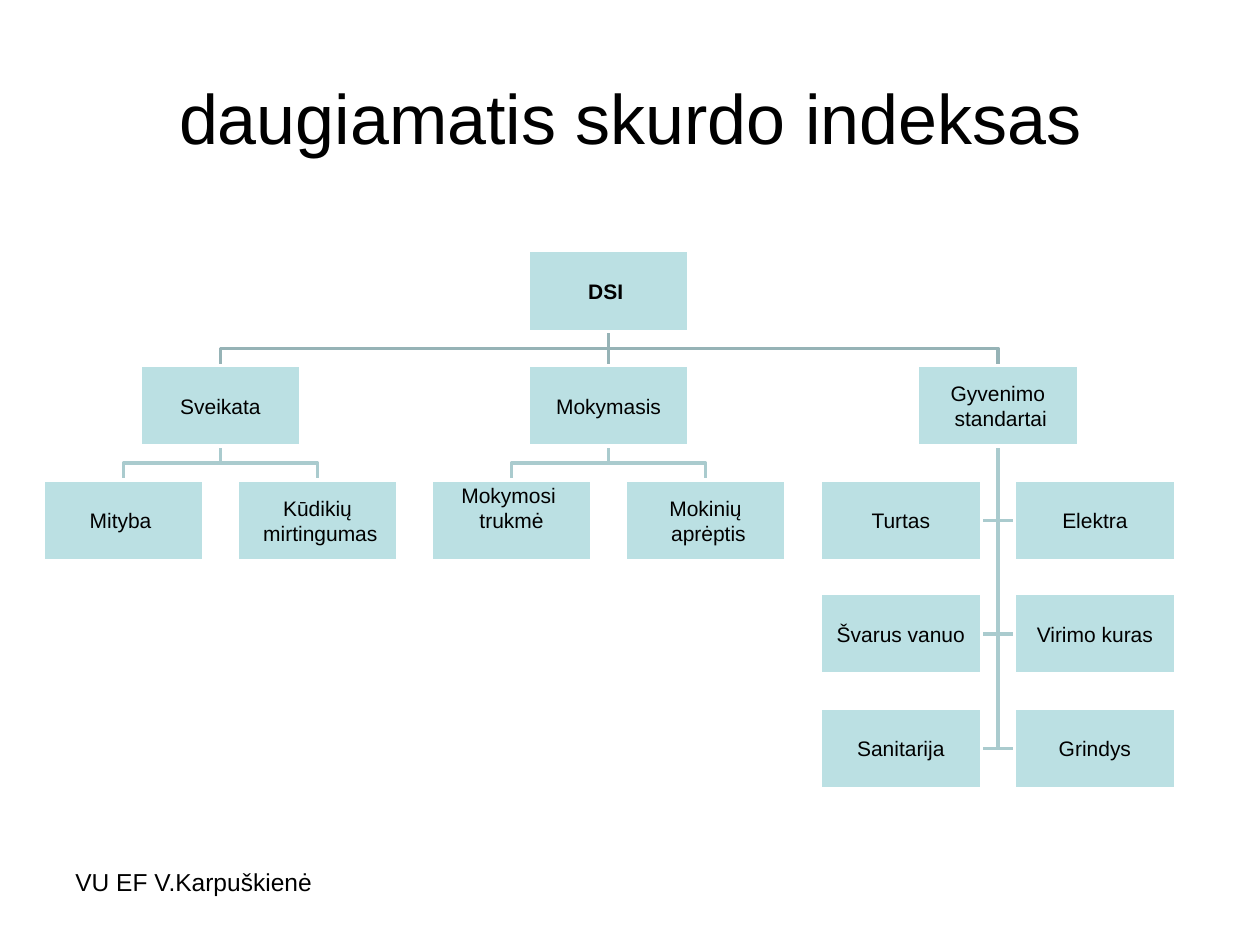
from lxml import etree
from pptx import Presentation
from pptx.dml.color import RGBColor
from pptx.enum.shapes import MSO_CONNECTOR, MSO_SHAPE
from pptx.enum.text import MSO_ANCHOR, PP_ALIGN
from pptx.oxml.ns import qn
from pptx.util import Inches, Pt

BOX_W, BOX_H = 1.28, 0.64
ROW_TOPS = [1.99, 2.9, 3.81, 4.71, 5.62]
ROOT_X = 4.83       # centre of the top box
LEAF_OFFSET = 0.77  # from a branch centre to its leaf centres
TRUNK, TWIG = "96B3B6", "AACBCE"

# Branch centre, branch lines, then rows of left and right leaves
BRANCHES = [
    (1.75, ["Sveikata"], [(["Mityba "], ["Kūdikių", " mirtingumas"])]),
    (ROOT_X, ["Mokymasis"], [(["Mokymosi ", "trukmė"], ["Mokinių", " aprėptis"])]),
    (7.92, ["Gyvenimo", " standartai"], [
        (["Turtas"], ["Elektra"]),
        (["Švarus vanuo"], ["Virimo kuras"]),
        (["Sanitarija"], ["Grindys"]),
    ]),
]


def rgb(hex_colour):
    return RGBColor.from_string(hex_colour)


def write(frame, lines, size, bold=False, align=PP_ALIGN.CENTER):
    frame.word_wrap = True
    for i, line in enumerate(lines):
        paragraph = frame.paragraphs[0] if i == 0 else frame.add_paragraph()
        paragraph.alignment = align
        run = paragraph.add_run()
        run.text = line
        run.font.name = "Arial"
        run.font.size = Pt(size)
        run.font.bold = bold
        run.font.color.rgb = rgb("000000")


prs = Presentation()
prs.slide_width, prs.slide_height = Inches(10), Inches(7.5)
slide = prs.slides.add_slide(prs.slide_layouts[5])
shapes = slide.shapes

# Title
title = shapes.title
title.left, title.top = Inches(0.5), Inches(0.3)
title.width, title.height = Inches(9), Inches(1.25)
title.text_frame.vertical_anchor = MSO_ANCHOR.MIDDLE
write(title.text_frame, ["daugiamatis skurdo indeksas"], 40)

# Author
author = shapes.add_textbox(Inches(0.5), Inches(6.83), Inches(2.33), Inches(0.52))
write(author.text_frame, ["VU EF V.Karpuškienė"], 14, align=PP_ALIGN.LEFT)

# Work out the boxes and the bent lines between them
boxes = [(ROOT_X, 0, ["DSI "])]
bends = []
root_bottom, branch_bottom = (top + BOX_H for top in ROW_TOPS[:2])
for branch_x, branch_lines, leaf_rows in BRANCHES:
    boxes.append((branch_x, 1, branch_lines))
    if branch_x != ROOT_X:
        middle = (root_bottom + ROW_TOPS[1]) / 2
        bends.append((TRUNK, [(ROOT_X, root_bottom), (ROOT_X, middle),
                              (branch_x, middle), (branch_x, ROW_TOPS[1])]))
    for row, pair in enumerate(leaf_rows, start=2):
        for side, leaf_lines in zip((-1, 1), pair):
            leaf_x = branch_x + side * LEAF_OFFSET
            boxes.append((leaf_x, row, leaf_lines))
            if len(leaf_rows) == 1:  # leaves joined from above
                middle = (branch_bottom + ROW_TOPS[row]) / 2
                route = [(branch_x, middle), (leaf_x, middle), (leaf_x, ROW_TOPS[row])]
            else:  # stacked leaves joined at their inner sides
                middle = ROW_TOPS[row] + BOX_H / 2
                route = [(branch_x, middle), (leaf_x - side * BOX_W / 2, middle)]
            bends.append((TWIG, [(branch_x, branch_bottom)] + route))

# Bent lines, behind the boxes
for colour, route in bends:
    points = [(Inches(x), Inches(y)) for x, y in route]
    builder = shapes.build_freeform(*points[0])
    builder.add_line_segments(points[1:], close=False)
    bend = builder.convert_to_shape()
    bend.shadow.inherit = False
    bend.fill.background()
    bend.line.color.rgb = rgb(colour)
    bend.line.width = Pt(2)

# Straight line from the top box to the middle branch
stem = shapes.add_connector(MSO_CONNECTOR.STRAIGHT, Inches(ROOT_X), Inches(root_bottom),
                            Inches(ROOT_X), Inches(ROW_TOPS[1]))
stem.line.color.rgb = rgb(TRUNK)
stem.line.width = Pt(2)
etree.SubElement(stem._element.spPr, qn("a:effectLst"))

# Boxes
for centre, row, lines in boxes:
    box = shapes.add_shape(MSO_SHAPE.RECTANGLE, Inches(centre - BOX_W / 2),
                           Inches(ROW_TOPS[row]), Inches(BOX_W), Inches(BOX_H))
    box.shadow.inherit = False
    box.fill.solid()
    box.fill.fore_color.rgb = rgb("BBE0E3")
    box.line.color.rgb = rgb("FFFFFF")
    box.line.width = Pt(2)
    frame = box.text_frame
    frame.vertical_anchor = MSO_ANCHOR.MIDDLE
    frame.margin_left = frame.margin_right = Inches(0.01)
    frame.margin_top = frame.margin_bottom = Inches(0.01)
    if "trukmė" in lines:  # this text sits high in its box
        frame.margin_bottom = Inches(0.21)
    write(frame, lines, 12, bold=row == 0)
    if row == 0:
        stem.begin_connect(box, 2)
    elif row == 1 and centre == ROOT_X:
        stem.end_connect(box, 0)

prs.save("out.pptx")
